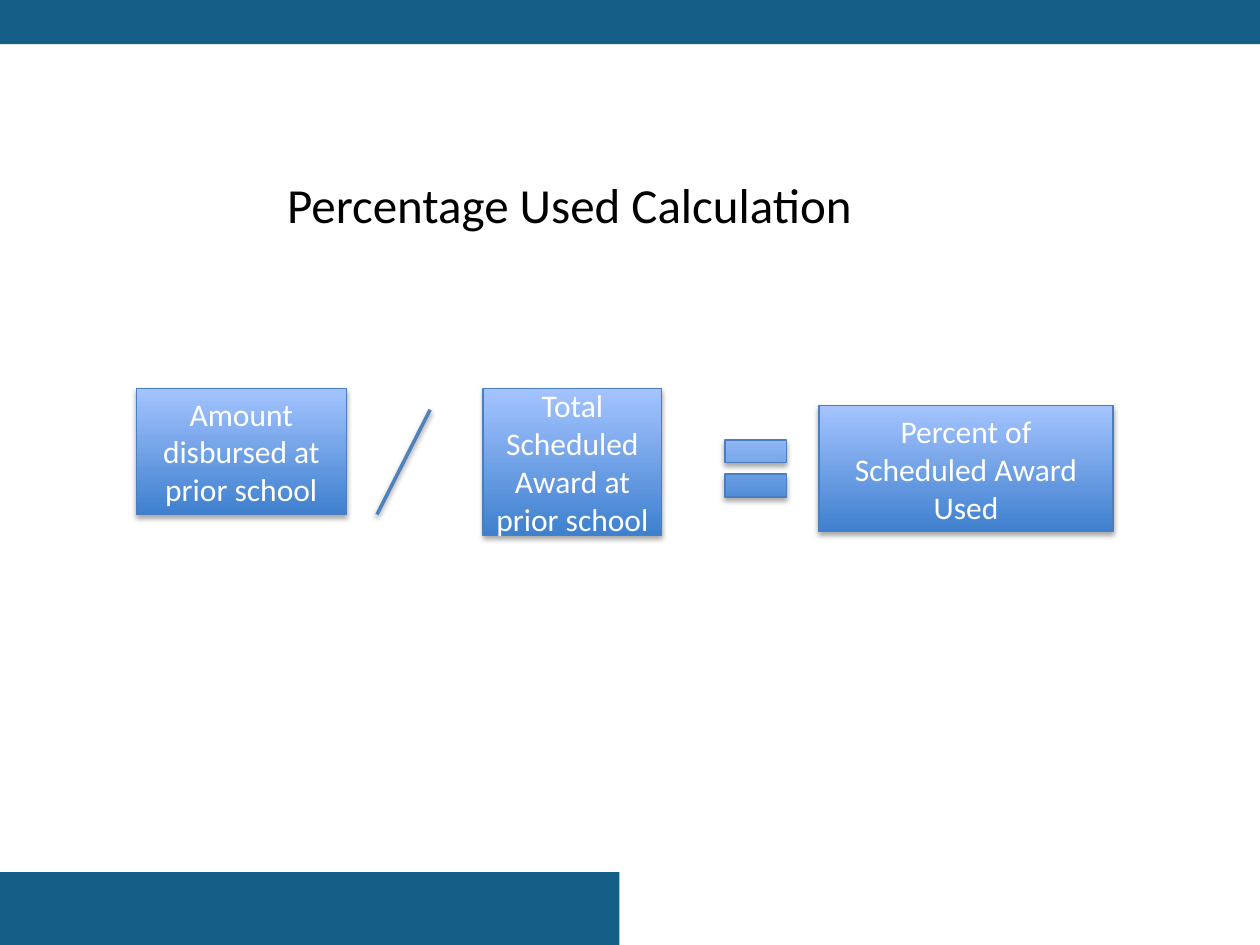
import pptx
import pptx.dml.color
import pptx.enum.shapes
import pptx.enum.text
import pptx.oxml
import pptx.oxml.ns
import pptx.util

Cm = pptx.util.Cm
Pt = pptx.util.Pt
RGBColor = pptx.dml.color.RGBColor
MSO_SHAPE = pptx.enum.shapes.MSO_SHAPE

BAND_BLUE = RGBColor(0x15, 0x5F, 0x86)
GRADIENT_BOTTOM = RGBColor(0x3F, 0x80, 0xCE)
GRADIENT_TOP = RGBColor(0xA4, 0xC4, 0xFF)
OUTLINE = RGBColor(0x4B, 0x7E, 0xBC)
SLASH_BLUE = RGBColor(0x4F, 0x81, 0xBD)
WHITE = RGBColor(0xFF, 0xFF, 0xFF)
BLACK = RGBColor(0, 0, 0)

FONT = "Calibri"
TERM_TOP = 7.83
TERM_HEIGHT = 2.54


def add_shadow(element, distance, opacity):
    """Give a shape or connector a soft shadow straight below it."""
    element.spPr.append(pptx.oxml.parse_xml(
        f'<a:effectLst {pptx.oxml.ns.nsdecls("a")}>'
        f'<a:outerShdw blurRad="{Pt(3.1)}" dist="{Pt(distance)}" dir="5400000" rotWithShape="0">'
        f'<a:srgbClr val="000000"><a:alpha val="{opacity * 1000}"/></a:srgbClr>'
        '</a:outerShdw></a:effectLst>'))


def add_run(paragraph, text, size, color):
    run = paragraph.add_run()
    run.text = text
    run.font.name = FONT
    run.font.size = Pt(size)
    run.font.color.rgb = color


def add_band(slide, left, top, width, height):
    band = slide.shapes.add_shape(MSO_SHAPE.RECTANGLE, Cm(left), Cm(top), Cm(width), Cm(height))
    band.shadow.inherit = False
    band.fill.solid()
    band.fill.fore_color.rgb = BAND_BLUE
    band.line.fill.background()


def add_glossy_shape(slide, kind, left, top, width, height):
    glossy = slide.shapes.add_shape(kind, Cm(left), Cm(top), Cm(width), Cm(height))
    glossy.fill.gradient()
    glossy.fill.gradient_angle = 90
    for stop, color in zip(glossy.fill.gradient_stops, (GRADIENT_BOTTOM, GRADIENT_TOP)):
        stop.color.rgb = color
    glossy.line.color.rgb = OUTLINE
    glossy.line.width = Pt(0.75)
    add_shadow(glossy._element, 1.8, 35)
    return glossy


def add_term(slide, text, left, top, width, height):
    term = add_glossy_shape(slide, MSO_SHAPE.RECTANGLE, left, top, width, height)
    frame = term.text_frame
    frame.word_wrap = True
    frame.vertical_anchor = pptx.enum.text.MSO_ANCHOR.MIDDLE
    frame.paragraphs[0].alignment = pptx.enum.text.PP_ALIGN.CENTER
    add_run(frame.paragraphs[0], text, 18, WHITE)


def add_division_slash(slide, start_x, start_y, end_x, end_y):
    slash = slide.shapes.add_connector(
        pptx.enum.shapes.MSO_CONNECTOR.STRAIGHT, Cm(start_x), Cm(start_y), Cm(end_x), Cm(end_y))
    slash.line.color.rgb = SLASH_BLUE
    slash.line.width = Pt(2)
    add_shadow(slash._element, 1.6, 38)


def add_title(slide, text, left, top, width, height):
    title = slide.shapes.add_textbox(Cm(left), Cm(top), Cm(width), Cm(height))
    title.text_frame.word_wrap = False
    title.text_frame.auto_size = pptx.enum.text.MSO_AUTO_SIZE.SHAPE_TO_FIT_TEXT
    add_run(title.text_frame.paragraphs[0], text, 28, BLACK)


def main():
    presentation = pptx.Presentation()
    presentation.slide_width = Cm(25.4)
    presentation.slide_height = Cm(19.05)
    slide = presentation.slides.add_slide(presentation.slide_layouts[6])

    # Bands at the bottom and top edges
    add_band(slide, 0, 17.58, 12.49, 1.47)
    add_band(slide, 0, 0, 25.4, 0.89)

    # Formula: amount / total = percent
    add_term(slide, "Amount disbursed at prior school", 2.75, TERM_TOP, 4.23, TERM_HEIGHT)
    add_division_slash(slide, 7.6, TERM_TOP + TERM_HEIGHT, 8.67, 8.26)
    add_term(slide, "Total Scheduled Award at prior school", 9.74, TERM_TOP, 3.6, 2.96)
    add_glossy_shape(slide, MSO_SHAPE.MATH_EQUAL, 14.39, 8.47, 1.69, 1.95)
    add_term(slide, "Percent of Scheduled Award Used", 16.51, 8.18, 5.93, TERM_HEIGHT)

    # Title
    add_title(slide, "Percentage Used Calculation", 5.54, 3.39, 12.01, 1.45)

    presentation.save("out.pptx")


if __name__ == "__main__":
    main()
